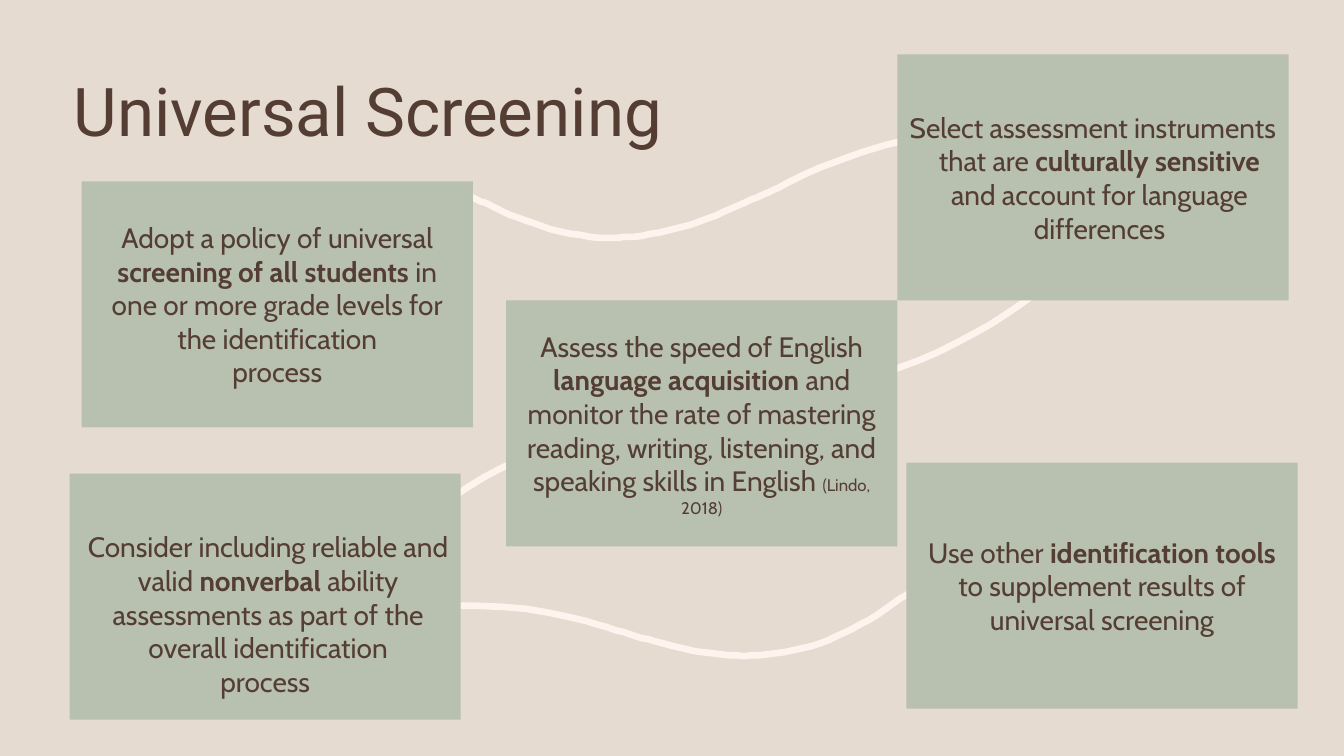
"""Build the Universal Screening slide on a grid of 1333 columns by 750 rows."""
import lxml.etree
import pptx
import pptx.dml.color
import pptx.enum.shapes
import pptx.enum.text
import pptx.oxml.ns
import pptx.util

COLUMNS, ROWS = 1333, 750
CELL = pptx.util.Inches(0.01)
SAND, SAGE, CREAM, BROWN = "E6DBD0", "B8C0B0", "FEF3ED", "543E34"
CARD_COLUMNS, CARD_ROWS = 388, 244
CURVE_STEPS = 12

CURVES = [
    [(833, 383), (913, 363), (985, 327), (1047, 275)],
    [(584, 428), (509, 452), (445, 490), (389, 539)],
    [(307, 223), (350, 187), (398, 177), (449, 190),
     (466, 194), (481, 201), (497, 209),
     (530, 224), (565, 235), (604, 236),
     (637, 236), (670, 229), (701, 217),
     (737, 203), (757, 193), (778, 183),
     (801, 171), (940, 103), (1027, 146)],
    [(920, 579), (904, 586), (891, 595), (877, 605),
     (848, 625), (815, 641), (778, 647),
     (746, 653), (714, 651), (681, 644),
     (645, 636), (624, 629), (602, 622),
     (578, 615), (434, 570), (347, 636)],
]

BOLD = {"bold": True}
SMALL = {"size": 12}
CARDS = [
    {"column": 81, "row": 180, "paragraphs": [
        [("Adopt a policy of universal ", {}), ("screening of all students ", BOLD),
         ("in one or more grade levels for the identification", {})],
        [("process", {})]]},
    {"column": 890, "row": 54, "hanging": 13, "paragraphs": [
        [("Select assessment instruments that are ", {}), ("culturally sensitive ", BOLD),
         ("and account for language differences", {})]]},
    {"column": 502, "row": 298, "paragraphs": [
        [("Assess the speed of English ", {}), ("language acquisition ", BOLD),
         ("and monitor the rate of mastering reading, writing, listening, "
          "and speaking skills in English ", {}),
         ("(Lindo, 2018)", SMALL)]]},
    {"column": 69, "row": 470, "margin": 6, "drop": 34, "paragraphs": [
        [("Consider including reliable and valid ", {}), ("nonverbal", BOLD),
         (" ability assessments as part of the overall identification", {})],
        [("process", {})]]},
    {"column": 899, "row": 459, "paragraphs": [
        [("Use other ", {}), ("identification tools ", BOLD),
         ("to supplement results of universal screening", {})]]},
]


def paint(color_format, color):
    """Set a fill or line format to a solid hex colour."""
    color_format.solid()
    color_format.fore_color.rgb = pptx.dml.color.RGBColor.from_string(color)


def add_text(para, text, size=20, font="Cabin", color=BROWN, bold=False):
    """Append one formatted span to a paragraph."""
    span = para.add_run()
    span.text = text
    span.font.name = font
    span.font.size = pptx.util.Pt(size)
    span.font.bold = bold
    paint(span.font.fill, color)


def trace_curve(knots):
    """Return points along a chain of cubic Bezier segments."""
    points = [knots[0]]
    for start in range(0, len(knots) - 1, 3):
        segment = knots[start:start + 4]
        for step in range(1, CURVE_STEPS + 1):
            t = step / CURVE_STEPS
            weights = ((1 - t) ** 3, 3 * t * (1 - t) ** 2, 3 * t * t * (1 - t), t ** 3)
            points.append(tuple(sum(weight * knot[axis] for weight, knot in zip(weights, segment))
                                for axis in (0, 1)))
    return points


def add_curve(page, knots):
    """Draw one open ribbon through its Bezier knots."""
    points = trace_curve(knots)
    builder = page.shapes.build_freeform(*points[0], scale=CELL)
    builder.add_line_segments(points[1:], close=False)
    curve = builder.convert_to_shape()
    curve.shadow.inherit = False
    curve.fill.background()
    paint(curve.line.fill, CREAM)
    curve.line.width = pptx.util.Pt(4.75)


def add_card(page, column, row, paragraphs, hanging=0, margin=0, drop=0):
    """Draw one sage card with centred text, optionally indented or lowered."""
    card = page.shapes.add_shape(
        pptx.enum.shapes.MSO_SHAPE.RECTANGLE,
        column * CELL, row * CELL, CARD_COLUMNS * CELL, CARD_ROWS * CELL)
    card.shadow.inherit = False
    paint(card.fill, SAGE)
    card.line.fill.background()
    frame = card.text_frame
    frame.word_wrap = True
    frame.vertical_anchor = pptx.enum.text.MSO_ANCHOR.MIDDLE
    frame.margin_top = (5 + drop) * CELL
    for index, spans in enumerate(paragraphs):
        para = frame.add_paragraph() if index else frame.paragraphs[0]
        para.alignment = pptx.enum.text.PP_ALIGN.CENTER
        if index == 0:
            properties = para._p.get_or_add_pPr()
            properties.set("marL", str((hanging or margin) * CELL))
            properties.set("indent", str(-hanging * CELL))
        for text, style in spans:
            add_text(para, text, **style)


def add_title(page, text):
    """Place and format the title placeholder."""
    title = page.shapes.title
    title.left, title.top, title.width, title.height = (
        63 * CELL, 77 * CELL, 1000 * CELL, 74 * CELL)
    frame = title.text_frame
    frame.auto_size = pptx.enum.text.MSO_AUTO_SIZE.NONE
    frame.vertical_anchor = pptx.enum.text.MSO_ANCHOR.MIDDLE
    para = frame.paragraphs[0]
    para.alignment = pptx.enum.text.PP_ALIGN.LEFT
    para.line_spacing = 0.9
    add_text(para, text, size=48, font="Roboto")


def main():
    """Build and save the deck."""
    deck = pptx.Presentation()
    deck.slide_width, deck.slide_height = COLUMNS * CELL, ROWS * CELL
    page = deck.slides.add_slide(deck.slide_layouts[5])
    paint(page.background.fill, SAND)
    for knots in CURVES:
        add_curve(page, knots)
    add_title(page, "Universal Screening")
    for card in CARDS:
        add_card(page, **card)
    deck.save("out.pptx")


if __name__ == "__main__":
    main()
